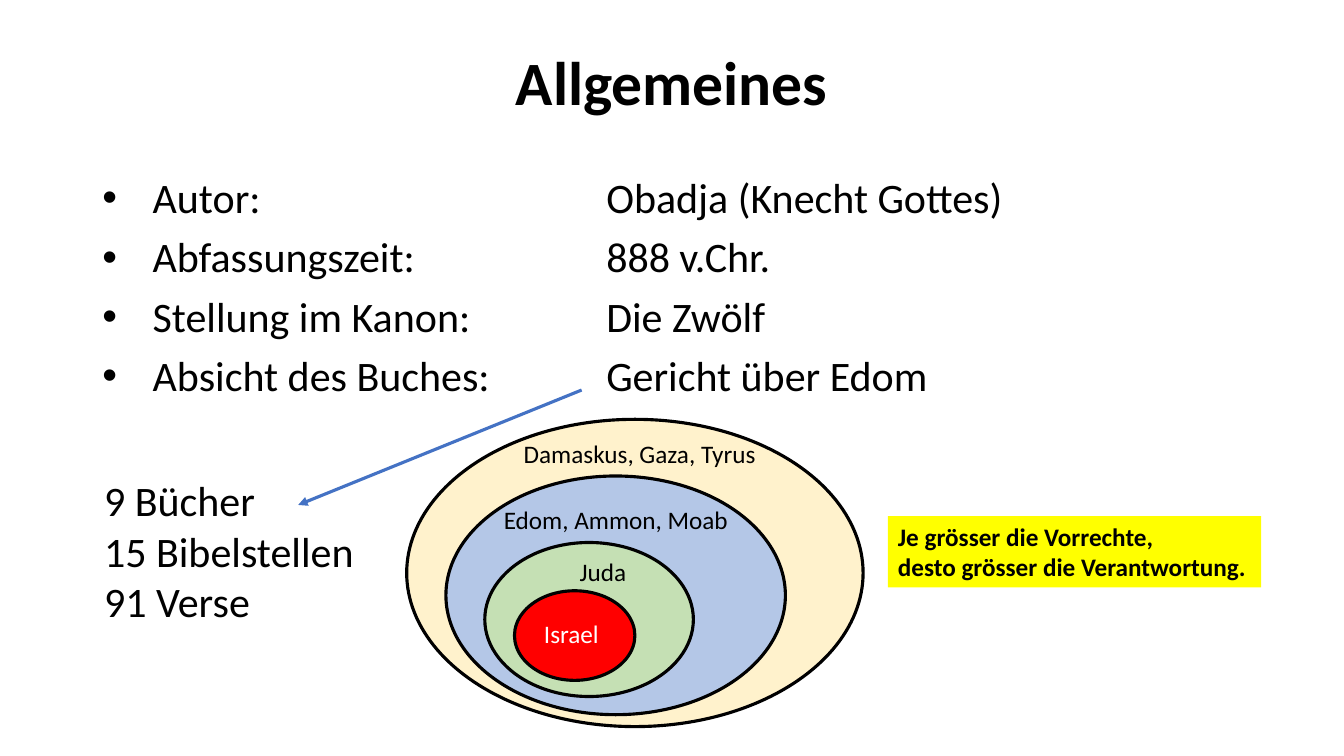
from dataclasses import dataclass

from lxml.etree import SubElement
from pptx import Presentation
from pptx.dml.color import RGBColor
from pptx.enum.shapes import MSO_CONNECTOR as Connector, MSO_SHAPE as Shape
from pptx.enum.text import MSO_ANCHOR as Anchor, PP_ALIGN as Align
from pptx.oxml.ns import qn
from pptx.util import Pt


@dataclass(frozen=True)
class Theme:
    font: str = "Calibri"
    title_size: int = 44
    body_size: int = 30
    label_size: int = 18
    line_width: float = 2.25
    black: str = "000000"
    white: str = "FFFFFF"
    cream: str = "FFF2CC"
    blue: str = "B4C7E7"
    green: str = "C5E0B4"
    red: str = "FF0000"
    yellow: str = "FFFF00"
    arrow: str = "4472C4"


def color(value):
    return RGBColor.from_string(value)


class SlideBuilder:
    def __init__(self, slide, theme):
        self.slide = slide
        self.theme = theme

    def fill_text(self, shape, lines, size, text_color=None, bold=False, align=Align.LEFT):
        text_frame = shape.text_frame
        text_frame.text = "\n".join(lines)
        for paragraph in text_frame.paragraphs:
            paragraph.alignment = align
            for run in paragraph.runs:
                run.font.name = self.theme.font
                run.font.size = Pt(size)
                run.font.bold = bold
                run.font.color.rgb = color(text_color or self.theme.black)

    def text(self, box, lines, size, wrap=True, **style):
        shape = self.slide.shapes.add_textbox(*map(Pt, box))
        shape.text_frame.word_wrap = wrap
        self.fill_text(shape, lines, size, **style)
        return shape

    def title(self, box, text):
        shape = self.text(box, [text], self.theme.title_size, bold=True, align=Align.CENTER)
        shape.text_frame.vertical_anchor = Anchor.MIDDLE
        shape.text_frame.paragraphs[0].line_spacing = 0.9

    def facts(self, box, rows, indent, value_left):
        """Bulleted label and value pairs, the values aligned at one tab stop."""
        shape = self.text(box, ["\t".join(row) for row in rows], self.theme.body_size)
        for index, paragraph in enumerate(shape.text_frame.paragraphs):
            properties = paragraph._p.get_or_add_pPr()
            properties.set("marL", str(Pt(indent)))
            properties.set("indent", str(-Pt(indent)))
            SubElement(properties, qn("a:buFont"), typeface="Arial")
            SubElement(properties, qn("a:buChar"), char="•")
            tabs = SubElement(properties, qn("a:tabLst"))
            SubElement(tabs, qn("a:tab"), pos=str(Pt(value_left)), algn="l")
            paragraph.line_spacing = 0.9
            if index:
                paragraph.space_before = Pt(10)

    def filled(self, kind, box, fill):
        shape = self.slide.shapes.add_shape(kind, *map(Pt, box))
        shape.shadow.inherit = False
        shape.fill.solid()
        shape.fill.fore_color.rgb = color(fill)
        return shape

    def ellipse(self, box, fill):
        shape = self.filled(Shape.OVAL, box, fill)
        shape.line.color.rgb = color(self.theme.black)
        shape.line.width = Pt(self.theme.line_width)

    def note(self, box, lines):
        shape = self.filled(Shape.RECTANGLE, box, self.theme.yellow)
        shape.line.fill.background()
        shape.text_frame.word_wrap = True
        shape.text_frame.vertical_anchor = Anchor.TOP
        self.fill_text(shape, lines, self.theme.label_size, bold=True)

    def arrow(self, start, end):
        connector = self.slide.shapes.add_connector(
            Connector.STRAIGHT, *map(Pt, start + end))
        connector.line.color.rgb = color(self.theme.arrow)
        connector.line.width = Pt(self.theme.line_width)
        SubElement(connector.line._get_or_add_ln(), qn("a:tailEnd"), type="triangle")
        SubElement(connector._element.spPr, qn("a:effectLst"))


def main():
    presentation = Presentation()
    presentation.slide_width, presentation.slide_height = Pt(960), Pt(540)
    slide = presentation.slides.add_slide(presentation.slide_layouts[6])
    theme = Theme()
    builder = SlideBuilder(slide, theme)

    builder.title((66, 28.8, 828, 64), "Allgemeines")
    builder.facts((66, 123, 869, 211), [
        ("Autor:", "Obadja (Knecht Gottes)"),
        ("Abfassungszeit:", "888 v.Chr."),
        ("Stellung im Kanon:", "Die Zwölf"),
        ("Absicht des Buches:", "Gericht über Edom"),
    ], indent=36, value_left=360)

    circles = [
        ((290.5, 299.5, 326, 219.5), theme.cream,
         "Damaskus, Gaza, Tyrus", (367, 309.6, 189, 29), theme.black),
        ((318.5, 340, 242.5, 170.5), theme.blue,
         "Edom, Ammon, Moab", (352.8, 357, 209.5, 29), theme.black),
        ((346.3, 387.5, 149, 110), theme.green,
         "Juda", (407, 394, 50.5, 29), theme.black),
        ((367.5, 422, 86, 64), theme.red,
         "Israel", (381.5, 438, 58.5, 29), theme.white),
    ]
    for ellipse_box, fill, label, label_box, label_color in circles:
        builder.ellipse(ellipse_box, fill)
        builder.text(label_box, [label], theme.label_size, text_color=label_color)

    builder.note((634.3, 368.6, 266.5, 51),
                 ["Je grösser die Vorrechte,", "desto grösser die Verantwortung."])
    builder.text((67.3, 335.5, 194.5, 116.5),
                 ["9 Bücher", "15 Bibelstellen", "91 Verse"], theme.body_size, wrap=False)
    builder.arrow((415.5, 278.6), (213, 360.7))

    presentation.save("out.pptx")


if __name__ == "__main__":
    main()
